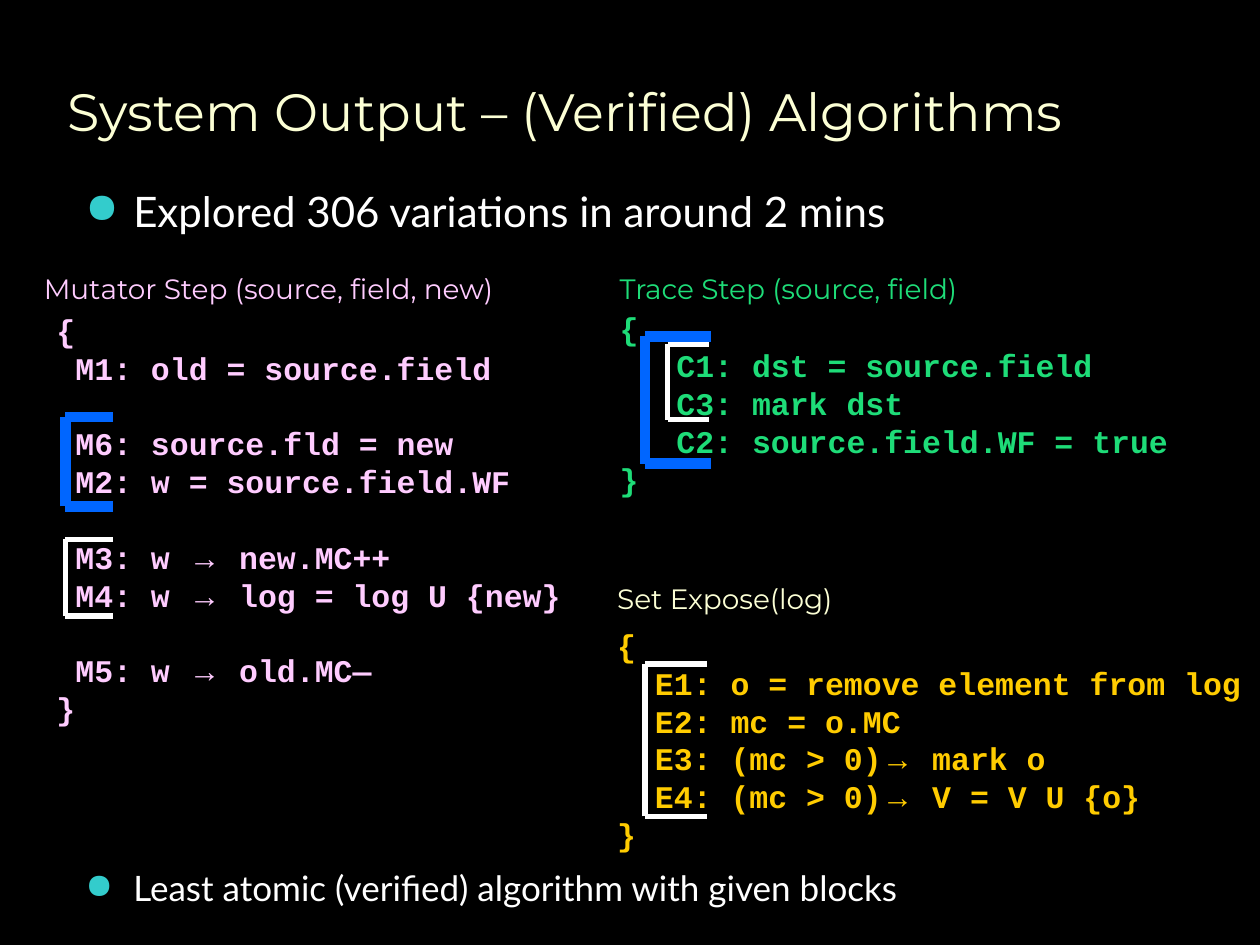
from lxml import etree
from pptx import Presentation
from pptx.dml.color import RGBColor
from pptx.enum.shapes import MSO_CONNECTOR
from pptx.enum.text import MSO_ANCHOR, PP_ALIGN
from pptx.oxml.ns import qn
from pptx.util import Inches, Pt

STRAIGHT = MSO_CONNECTOR.STRAIGHT
MIDDLE = MSO_ANCHOR.MIDDLE
LEFT = PP_ALIGN.LEFT
TITLE_ONLY = 5
CODE_LINE = Pt(21.6)

COLORS = {
    "background": "000000",
    "cream": "FCFFD5",
    "white": "FFFFFF",
    "pink": "FFCCFF",
    "green": "1EDC78",
    "gold": "FFCC00",
    "blue": "0066FF",
    "bullet": "33CCCC",
}


def format_run(run, font, size, color, bold=False):
    run.font.name = font
    run.font.size = Pt(size)
    run.font.bold = bold
    run.font.color.rgb = RGBColor.from_string(COLORS[color])


def add_text_box(left, top, width, height):
    box = slide.shapes.add_textbox(Inches(left), Inches(top), Inches(width), Inches(height))
    return box.text_frame


presentation = Presentation()
presentation.slide_width = Inches(10)
presentation.slide_height = Inches(7.5)
slide = presentation.slides.add_slide(presentation.slide_layouts[TITLE_ONLY])
slide.background.fill.solid()
slide.background.fill.fore_color.rgb = RGBColor.from_string(COLORS["background"])

# Title
title = slide.shapes.title
title.left, title.top = Inches(0.33), Inches(0.25)
title.width, title.height = Inches(9.14), Inches(1.25)
title.text_frame.text = " System Output – (Verified) Algorithms"
title.text_frame.vertical_anchor = MIDDLE
title.text_frame.paragraphs[0].alignment = LEFT
format_run(title.text_frame.paragraphs[0].runs[0], "Montserrat", 30, "cream")

# Headings of the three algorithms
headings = [
    ("Mutator Step (source, field, new)", 0.25, 2, 5, "pink"),
    ("Trace Step (source, field)", 4.82, 2, 3.67, "green"),
    ("Set Expose(log)", 4.8, 4.46, 3.85, "cream"),
]
for text, left, top, width, color in headings:
    frame = add_text_box(left, top, width, 0.58)
    frame.word_wrap = True
    frame.vertical_anchor = MIDDLE
    frame.text = text
    format_run(frame.paragraphs[0].runs[0], "Montserrat", 16, color)

# Code: each group of lines is set off from the one before by one line of space
mutator_code = [
    ["{", " M1: old = source.field"],
    [" M6: source.fld = new", " M2: w = source.field.WF"],
    [" M3: w → new.MC++", " M4: w → log = log U {new}"],
    [" M5: w → old.MC—", "}"],
]
trace_code = [[
    "{",
    "   C1: dst = source.field",
    "   C3: mark dst",
    "   C2: source.field.WF = true",
    "}",
]]
expose_code = [[
    "{",
    "  E1: o = remove element from log",
    "  E2: mc = o.MC",
    "  E3: (mc > 0)→ mark o",
    "  E4: (mc > 0)→ V = V U {o}",
    "}",
]]
code_blocks = [
    (mutator_code, 0.35, 2.42, 4.46, 3.4, "pink"),
    (trace_code, 4.82, 2.4, 4.75, 1.6, "green"),
    (expose_code, 4.8, 4.92, 5.17, 1.9, "gold"),
]
for groups, left, top, width, height, color in code_blocks:
    frame = add_text_box(left, top, width, height)
    frame.word_wrap = False
    paragraph = frame.paragraphs[0]
    for group_number, group in enumerate(groups):
        for line_number, line in enumerate(group):
            if group_number or line_number:
                paragraph = frame.add_paragraph()
            paragraph.line_spacing = CODE_LINE
            if group_number and line_number == 0:
                paragraph.space_before = CODE_LINE
            before, arrow, after = line.partition("→")
            for text in filter(None, (before, arrow, after)):
                run = paragraph.add_run()
                run.text = text
                font = "Arial" if text == "→" else "Courier New"
                format_run(run, font, 18, color, bold=True)

# Brackets around the atomic blocks: left, top, right, bottom
brackets = [
    (0.52, 4.28, 0.9, 4.89, "white", 3),
    (0.52, 3.31, 0.9, 4.02, "blue", 6),
    (5.12, 5.27, 5.61, 6.48, "white", 3),
    (5.3, 2.73, 5.63, 3.33, "white", 3),
    (5.12, 2.67, 5.64, 3.68, "blue", 6),
]
for left, top, right, bottom, color, weight in brackets:
    sides = [
        (left, bottom, left, top),
        (left, top, right, top),
        (left, bottom, right, bottom),
    ]
    for side in sides:
        line = slide.shapes.add_connector(STRAIGHT, *(Inches(value) for value in side))
        line.line.color.rgb = RGBColor.from_string(COLORS[color])
        line.line.width = Pt(weight)
        etree.SubElement(line._element.spPr, qn("a:effectLst"))

# Bulleted remarks
remarks = [
    ("Explored 306 variations in around 2 mins", 1.42, 0.75, 24),
    ("Least atomic (verified) algorithm with given blocks", 6.83, 0.58, 20),
]
for text, top, height, size in remarks:
    frame = add_text_box(0.58, top, 9, height)
    frame.word_wrap = True
    frame.text = text
    paragraph = frame.paragraphs[0]
    format_run(paragraph.runs[0], "Lato", size, "white")
    properties = paragraph._p.get_or_add_pPr()
    properties.set("marL", str(Inches(0.38)))
    properties.set("indent", str(-Inches(0.38)))
    bullet_color = etree.SubElement(properties, qn("a:buClr"))
    etree.SubElement(bullet_color, qn("a:srgbClr"), val=COLORS["bullet"])
    etree.SubElement(properties, qn("a:buChar"), char="●")

presentation.save("out.pptx")
